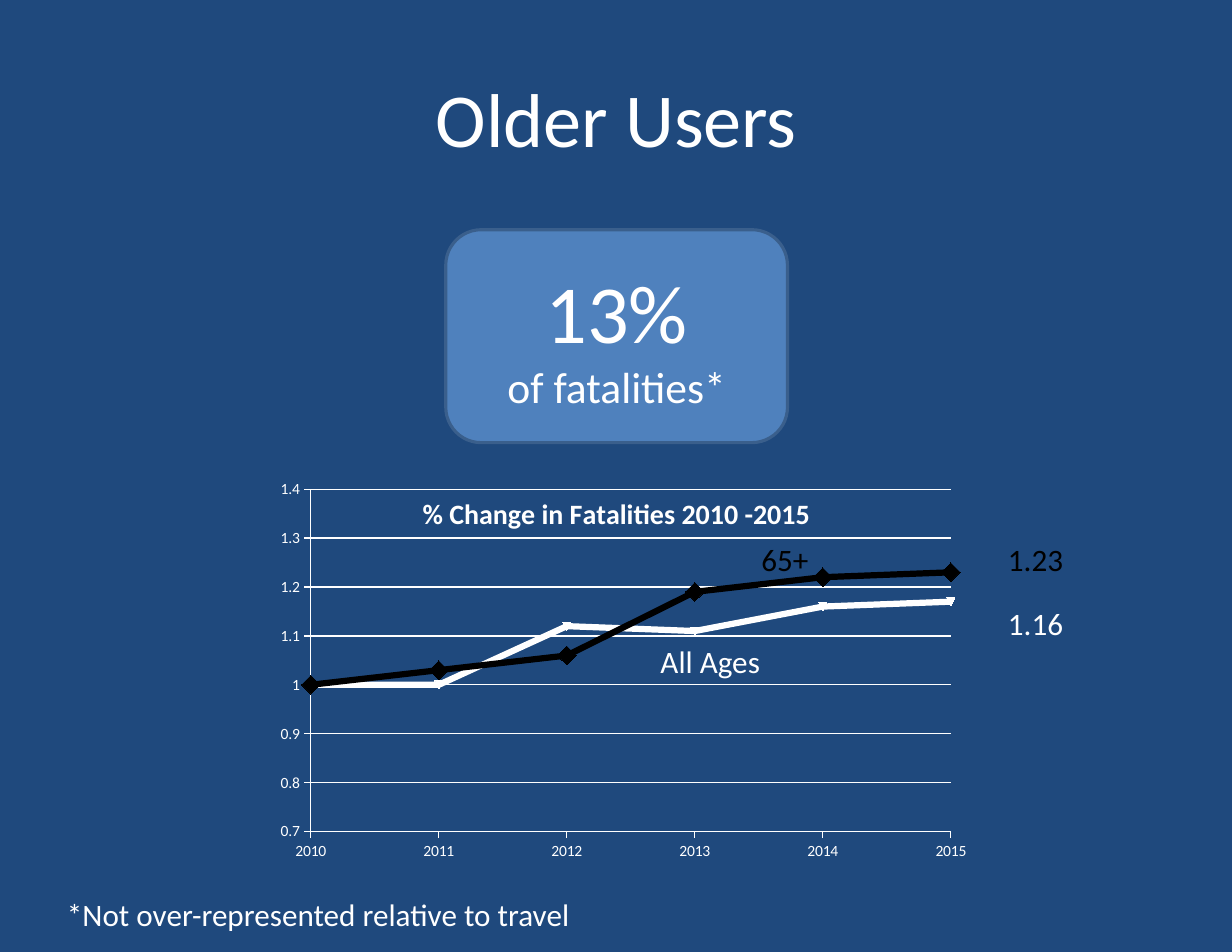
from dataclasses import dataclass

import pptx
import pptx.chart.data
import pptx.dml.color
import pptx.enum.chart
import pptx.enum.shapes
import pptx.enum.text
import pptx.oxml
import pptx.oxml.ns
import pptx.util
from pptx.util import Cm

RGB = pptx.dml.color.RGBColor.from_string
ALIGN = pptx.enum.text.PP_ALIGN
ANCHOR = pptx.enum.text.MSO_ANCHOR
qn = pptx.oxml.ns.qn


@dataclass(frozen=True)
class Theme:
    """Colours, font and type sizes of the slide."""
    font: str = "Calibri"
    background: str = "1F497D"
    card: str = "4F81BD"
    card_edge: str = "3A5F8C"
    light: str = "FFFFFF"
    dark: str = "000000"
    title: int = 49
    figure: int = 53
    caption: int = 28
    label: int = 20
    chart_title: int = 18
    axis: int = 10


@dataclass(frozen=True)
class Box:
    """A region in centimetres."""
    left: float
    top: float
    width: float
    height: float

    def lengths(self):
        """Return left, top, width and height as lengths."""
        return tuple(Cm(v) for v in (self.left, self.top, self.width, self.height))

    def inner(self, left, top, width, height):
        """Return a box offset from this box's corner."""
        return Box(self.left + left, self.top + top, width, height)


THEME = Theme()
YEARS = range(2010, 2016)
OLDER = (1, 1.03, 1.06, 1.19, 1.22, 1.23)
ALL_AGES = (1, 1, 1.12, 1.11, 1.16, 1.17)


def style_font(font, size, color, bold=False):
    """Apply the theme font with a size and colour."""
    font.name = THEME.font
    font.size = pptx.util.Pt(size)
    font.bold = bold
    font.color.rgb = RGB(color)


def style_line(line, color, width):
    """Give a line a solid colour and a width in points."""
    line.color.rgb = RGB(color)
    line.width = pptx.util.Pt(width)


def add_title(slide, box):
    """Move and fill the title placeholder."""
    title = slide.shapes.title
    title.left, title.top, title.width, title.height = box.lengths()
    frame = title.text_frame
    frame.text = "Older Users"
    frame.vertical_anchor = ANCHOR.MIDDLE
    frame.paragraphs[0].alignment = ALIGN.CENTER
    style_font(frame.paragraphs[0].font, THEME.title, THEME.light)


def add_card(slide, box):
    """Add the rounded card with the share of fatalities."""
    card = slide.shapes.add_shape(
        pptx.enum.shapes.MSO_SHAPE.ROUNDED_RECTANGLE, *box.lengths())
    card.shadow.inherit = False
    card.fill.solid()
    card.fill.fore_color.rgb = RGB(THEME.card)
    style_line(card.line, THEME.card_edge, 2)
    frame = card.text_frame
    frame.text = "13%\nof fatalities*"
    frame.vertical_anchor = ANCHOR.MIDDLE
    for paragraph, size in zip(frame.paragraphs, (THEME.figure, THEME.caption)):
        paragraph.alignment = ALIGN.CENTER
        style_font(paragraph.font, size, THEME.light)


def add_label(slide, box, text, color):
    """Add a one-line text box."""
    frame = slide.shapes.add_textbox(*box.lengths()).text_frame
    frame.word_wrap = True
    frame.text = text
    style_font(frame.paragraphs[0].font, THEME.label, color)


def set_layout(parent, index, target=None, **fractions):
    """Give a chart part a manual layout in fractions of the chart."""
    for old in parent.findall(qn("c:layout")):
        parent.remove(old)
    settings = [("layoutTarget", target)] if target else []
    settings += [("xMode", "edge"), ("yMode", "edge"), *fractions.items()]
    children = "".join(f'<c:{tag} val="{value}"/>' for tag, value in settings)
    parent.insert(index, pptx.oxml.parse_xml(
        f'<c:layout {pptx.oxml.ns.nsdecls("c")}>'
        f"<c:manualLayout>{children}</c:manualLayout></c:layout>"))


def style_axis(axis, low, high, step, number_format):
    """Set the scale, ticks and lines of an axis."""
    axis.minimum_scale, axis.maximum_scale, axis.major_unit = low, high, step
    axis.major_tick_mark = pptx.enum.chart.XL_TICK_MARK.OUTSIDE
    axis.minor_tick_mark = pptx.enum.chart.XL_TICK_MARK.NONE
    axis.tick_labels.number_format = number_format
    axis.tick_labels.number_format_is_linked = False
    style_line(axis.format.line, THEME.light, 0.75)


def add_trend_chart(slide, box):
    """Add the chart of change in fatalities with its labels."""
    data = pptx.chart.data.XyChartData()
    for name, values in (("Series 1", OLDER), ("Series 2", ALL_AGES)):
        series = data.add_series(name)
        for year, value in zip(YEARS, values):
            series.add_data_point(year, value)
    chart = slide.shapes.add_chart(
        pptx.enum.chart.XL_CHART_TYPE.XY_SCATTER_LINES, *box.lengths(), data).chart
    style_font(chart.font, THEME.axis, THEME.light)
    chart.has_legend = False
    chart.plots[0].vary_by_categories = False

    style_axis(chart.category_axis, YEARS[0], YEARS[-1], 1, "0")
    style_axis(chart.value_axis, 0.7, 1.4, 0.1, "General")
    chart.category_axis.has_major_gridlines = False
    chart.value_axis.has_major_gridlines = True
    style_line(chart.value_axis.major_gridlines.format.line, THEME.light, 0.75)

    heading = chart.chart_title
    heading.text_frame.text = "% Change in Fatalities 2010 -2015"
    style_font(heading.text_frame.paragraphs[0].font,
               THEME.chart_title, THEME.light, bold=True)
    heading.include_in_layout = True
    set_layout(chart.element.find(".//" + qn("c:title")), 1, x=0.22, y=0.03)
    set_layout(chart.element.find(".//" + qn("c:plotArea")), 0, "inner",
               x=0.07, y=0.03, w=0.9, h=0.85)

    older, all_ages = chart.plots[0].series
    older.marker.style = pptx.enum.chart.XL_MARKER_STYLE.DIAMOND
    for series, color, size in ((older, THEME.dark, 12), (all_ages, THEME.light, 5)):
        series.smooth = False
        style_line(series.format.line, color, 4)
        series.marker.size = size
        series.marker.format.fill.solid()
        series.marker.format.fill.fore_color.rgb = RGB(color)
        series.marker.format.line.color.rgb = RGB(color)

    for text, color, left, top, width in (
            ("1.16", THEME.light, 16.69, 2.77, 2.29),
            ("1.23", THEME.dark, 16.69, 1.3, 2.29),
            ("All Ages", THEME.light, 8.81, 3.63, 3.81),
            ("65+", THEME.dark, 11.1, 1.32, 2.29)):
        add_label(slide, box.inner(left, top, width, 1.14), text, color)


def main():
    """Build and save the slide."""
    deck = pptx.Presentation()
    deck.slide_width, deck.slide_height = Cm(27.94), Cm(21.59)
    slide = deck.slides.add_slide(deck.slide_layouts.get_by_name("Title Only"))
    slide.background.fill.solid()
    slide.background.fill.fore_color.rgb = RGB(THEME.background)
    add_title(slide, Box(1.4, 0.86, 25.15, 3.61))
    add_card(slide, Box(10.11, 5.21, 7.75, 4.83))
    add_trend_chart(slide, Box(5.92, 10.82, 16.13, 9.14))
    add_label(slide, Box(1.27, 20.19, 13.46, 1.12),
              "*Not over-represented relative to travel", THEME.light)
    deck.save("out.pptx")


if __name__ == "__main__":
    main()
